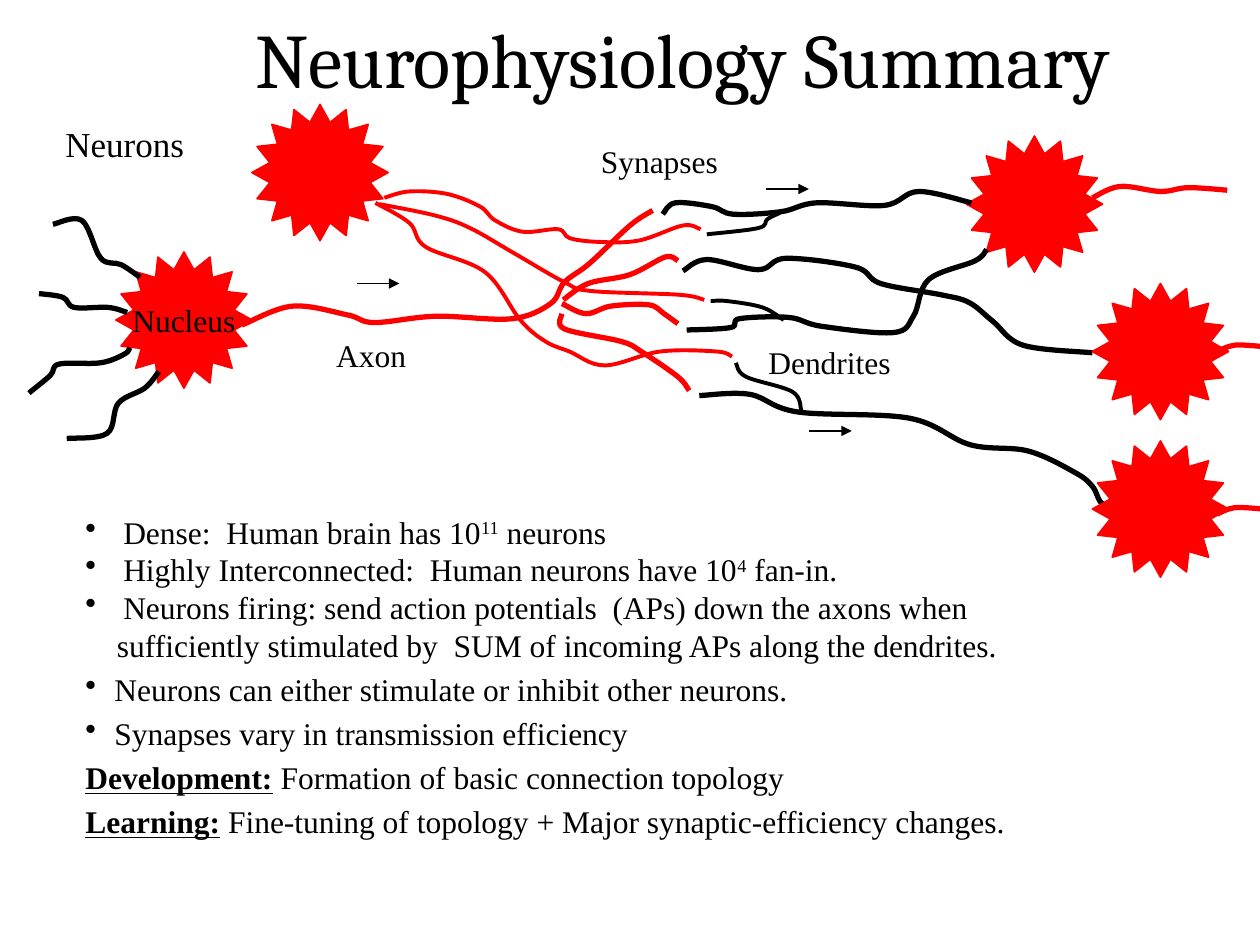
from pptx import Presentation
from pptx.dml.color import RGBColor as RGB
from pptx.enum.shapes import MSO_CONNECTOR as Link, MSO_SHAPE as Kind
from pptx.enum.text import MSO_ANCHOR as Anchor, MSO_AUTO_SIZE as Fit, PP_ALIGN as Align
from pptx.oxml.ns import qn
from pptx.util import Inches, Pt
from lxml.etree import SubElement as Sub


class Theme:
    red = RGB(255, 0, 0)
    black = RGB(0, 0, 0)
    face, head = "Times New Roman", "Cambria"
    title, label, body = 44, 20, 18
    thick, thin, edge = 3, 2.25, 1


SIZE = 1.08
BACK = [(0.92, 2, "Nucleus"), (7.67, 1.08, "")]
FRONT = [(8.67, 2.25, ""), (8.67, 3.5, ""), (2, 0.83, "")]

AXON = [
    [(1.92, 2.58), (2.32, 2.43), (2.76, 2.5), (2.97, 2.56), (3.46, 2.51), (4.06, 2.53),
     (4.37, 2.41), (4.48, 2.24), (4.68, 2.09), (5, 1.79), (5.18, 1.67)],
    [(4.47, 2.38), (4.67, 2.25), (5, 2.18), (5.28, 2.04), (5.38, 2.07)],
    [(4.46, 2.41), (4.65, 2.49), (4.85, 2.43), (5.15, 2.42), (5.27, 2.49), (5.38, 2.57)],
    [(4.46, 2.49), (4.48, 2.61), (4.93, 2.71), (5.09, 2.79), (5.38, 2.99), (5.47, 3.1)],
]
DENDRITE = [
    [(0.42, 1.78), (0.65, 1.75), (0.8, 2.05), (0.96, 2.1), (1.11, 2.2)],
    [(0.31, 2.33), (0.5, 2.36), (0.59, 2.44), (0.86, 2.44), (1.01, 2.48)],
    [(0.23, 3.12), (0.4, 2.98), (0.47, 2.89), (0.8, 2.88), (0.99, 2.81), (1.03, 2.76)],
    [(0.53, 3.48), (0.85, 3.44), (0.94, 3.2), (1.15, 3.08), (1.26, 2.95)],
    [(5.26, 1.7), (5.36, 1.61), (5.65, 1.64), (5.82, 1.7), (6.2, 1.68), (6.48, 1.61),
     (7.02, 1.63), (7.29, 1.52), (7.71, 1.61)],
    [(5.42, 2.15), (5.61, 2.06), (6.02, 2.14), (6.24, 2.05), (6.79, 2.12), (6.99, 2.25),
     (7.47, 2.34), (7.69, 2.4), (7.88, 2.55), (8.12, 2.74), (8.67, 2.8)],
    [(5.55, 3.14), (5.95, 3.13), (6.33, 3.27), (7.22, 3.32), (7.7, 3.53), (8.16, 3.58),
     (8.53, 3.75), (8.67, 3.86), (8.76, 4.01), (8.97, 4.05)],
    [(5.45, 2.62), (5.8, 2.6), (5.87, 2.53), (6.26, 2.52), (6.52, 2.59), (7.09, 2.64),
     (7.25, 2.51), (7.37, 2.22), (7.74, 2.07), (7.83, 1.98)],
]
TAIL = [[(8.67, 1.57), (8.89, 1.48), (9.21, 1.52), (9.43, 1.49), (9.74, 1.51)]]
TAIL += [[(9.66, y), (9.8, y - 0.05), (10.02, y - 0.04)] for y in (2.79, 4.08)]
BRANCH = [
    [(3.05, 1.57), (3.25, 1.52), (3.55, 1.54), (3.81, 1.64), (3.93, 1.75), (4.15, 1.84),
     (4.43, 1.82), (4.52, 1.89), (4.74, 1.92), (5.07, 1.91), (5.42, 1.79), (5.56, 1.82)],
    [(2.98, 1.61), (3.25, 1.77), (3.38, 1.96), (3.85, 2.16), (4.13, 2.54), (4.33, 2.71),
     (4.52, 2.79), (4.8, 2.9), (5.24, 2.79), (5.69, 2.79), (5.81, 2.83)],
    [(3.01, 1.62), (3.45, 1.71), (3.73, 1.81), (4.08, 2.01), (4.48, 2.24), (4.69, 2.31),
     (5.39, 2.34), (5.59, 2.38)],
]
TWIG = [
    [(6.19, 1.69), (6.09, 1.74), (6.02, 1.81), (5.61, 1.86)],
    [(6.22, 2.54), (6.05, 2.44), (5.77, 2.39), (5.64, 2.39)],
    [(6.36, 3.26), (6.29, 3.11), (5.92, 2.99), (5.84, 2.88)],
]
ARROWS = [(2.83, 2.25), (6.08, 1.5), (6.42, 3.42)]
LABELS = [("Axon", 2.57, 2.62, 0.76, Theme.body), ("Dendrites", 6, 2.67, 1.17, Theme.body),
          ("Synapses", 4.67, 1.08, 1.13, Theme.body), ("Neurons", 0.42, 0.92, 1.14, Theme.label)]
NOTES = [
    ("•", 0.3, 0, [("Dense:  Human brain has 10", ""), ("11", "sup"), (" neurons", "")]),
    ("•", 0.3, 0, [("Highly Interconnected:  Human neurons have 10", ""), ("4", "sup"), (" fan-in.", "")]),
    ("•", 0.3, 0, [("Neurons firing: send action potentials  (APs) down the axons when", "")]),
    ("", 0.25, 0, [("sufficiently stimulated by  SUM of incoming APs along the dendrites.", "")]),
    ("•", 0.23, 3.6, [("Neurons can either stimulate or inhibit other neurons.", "")]),
    ("•", 0.23, 3.6, [("Synapses vary in transmission efficiency", "")]),
    ("", 0, 3.6, [("Development:", "key"), (" Formation of basic connection topology", "")]),
    ("", 0, 3.6, [("Learning:", "key"), (" Fine-tuning of topology + Major synaptic-efficiency changes.", "")]),
]

deck = Presentation()
deck.slide_width, deck.slide_height = Inches(10), Inches(7.5)
shapes = deck.slides.add_slide(deck.slide_layouts[6]).shapes


def style(para, size, face=Theme.face):
    para.font.size, para.font.name = Pt(size), face
    para.font.color.rgb = Theme.black


def text_box(x, y, w, h, wrap=True):
    frame = shapes.add_textbox(Inches(x), Inches(y), Inches(w), Inches(h)).text_frame
    frame.word_wrap = wrap
    return frame


def star(x, y, text):
    cell = shapes.add_shape(Kind.STAR_16_POINT, Inches(x), Inches(y), Inches(SIZE), Inches(SIZE))
    cell.shadow.inherit = False
    cell.fill.solid()
    cell.fill.fore_color.rgb = cell.line.color.rgb = Theme.red
    cell.line.width = Pt(Theme.edge)
    if text:
        frame = cell.text_frame
        frame.word_wrap, frame.vertical_anchor = False, Anchor.MIDDLE
        para = frame.paragraphs[0]
        para.text, para.alignment = text, Align.CENTER
        style(para, Theme.body)


def smooth(knots):
    ends = [knots[0], *knots, knots[-1]]
    pts = [knots[0]]
    for a, b, c, d in zip(ends, ends[1:], ends[2:], ends[3:]):
        pts.append(tuple(q + (r - p) / 6 for p, q, r in zip(a, b, c)))
        pts.append(tuple(q - (r - p) / 6 for p, q, r in zip(b, c, d)))
        pts.append(c)
    return [(Inches(x), Inches(y)) for x, y in pts]


def curve(knots, color, width):
    pts = smooth(knots)
    pen = shapes.build_freeform(*pts[0], scale=1.0)
    pen.add_line_segments(pts[1:], close=False)
    nerve = pen.convert_to_shape()
    nerve.shadow.inherit = False
    nerve.fill.background()
    nerve.line.color.rgb, nerve.line.width = color, Pt(width)
    steps = list(nerve._element.iter(qn("a:lnTo")))
    route = steps[0].getparent()
    for i in range(0, len(steps), 3):
        bend = Sub(route, qn("a:cubicBezTo"))
        for step in steps[i:i + 3]:
            bend.append(step[0])
            route.remove(step)


def arrow(x, y):
    link = shapes.add_connector(Link.STRAIGHT, Inches(x), Inches(y), Inches(x + 0.34), Inches(y))
    link.line.color.rgb, link.line.width = Theme.black, Pt(Theme.edge)
    Sub(link.line._get_or_add_ln(), qn("a:tailEnd"), type="triangle")
    Sub(link._element.spPr, qn("a:effectLst"))


def note(para, mark, left, gap, runs):
    style(para, Theme.body)
    para.space_before = Pt(gap)
    props = para._p.get_or_add_pPr()
    props.set("marL", str(Inches(left)))
    props.set("indent", str(-Inches(left) if mark else 0))
    bullet = Sub(props, qn("a:buChar" if mark else "a:buNone"))
    if mark:
        bullet.set("char", mark)
    props.append(props.find(qn("a:defRPr")))
    for text, kind in runs:
        run = para.add_run()
        run.text = text
        if kind == "sup":
            run._r.get_or_add_rPr().set("baseline", "30000")
        if kind == "key":
            run.font.bold = run.font.underline = True


frame = text_box(1.17, 0.17, 8.5, 0.58)
frame.vertical_anchor = Anchor.MIDDLE
para = frame.paragraphs[0]
para.text, para.alignment = "Neurophysiology Summary", Align.CENTER
style(para, Theme.title, Theme.head)

for cell in BACK:
    star(*cell)
for group, color in ((AXON, Theme.red), (DENDRITE, Theme.black)):
    for knots in group:
        curve(knots, color, Theme.thick)
for cell in FRONT:
    star(*cell)
for group, color, width in ((TAIL, Theme.red, Theme.thick), (BRANCH, Theme.red, Theme.thin),
                            (TWIG, Theme.black, Theme.thin)):
    for knots in group:
        curve(knots, color, width)
for spot in ARROWS:
    arrow(*spot)
for text, x, y, w, size in LABELS:
    frame = text_box(x, y, w, 0.4, False)
    frame.auto_size = Fit.SHAPE_TO_FIT_TEXT
    frame.text = text
    style(frame.paragraphs[0], size)

frame = text_box(0.58, 4.02, 7.51, 2.8)
for i, item in enumerate(NOTES):
    note(frame.add_paragraph() if i else frame.paragraphs[0], *item)

deck.save("out.pptx")
